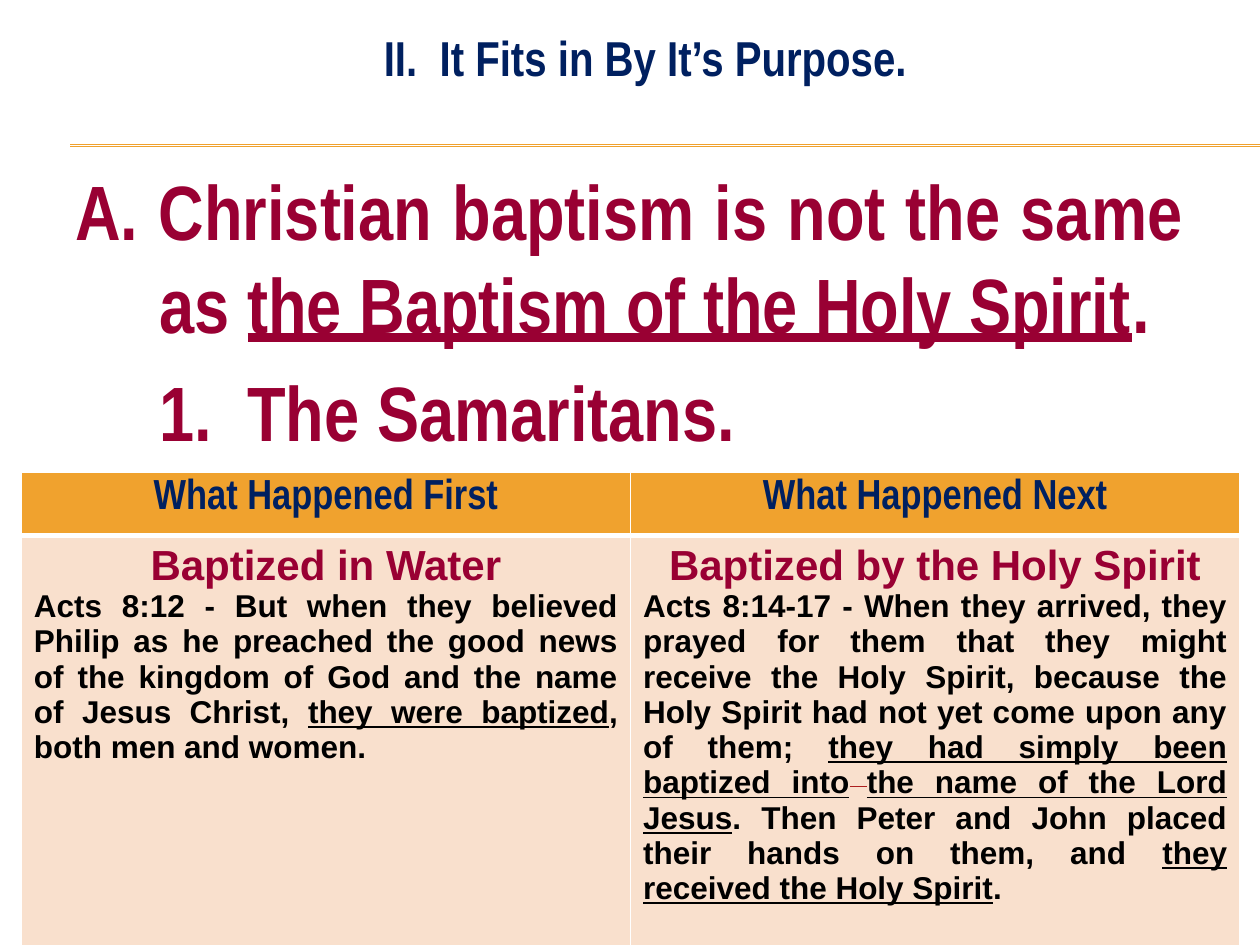
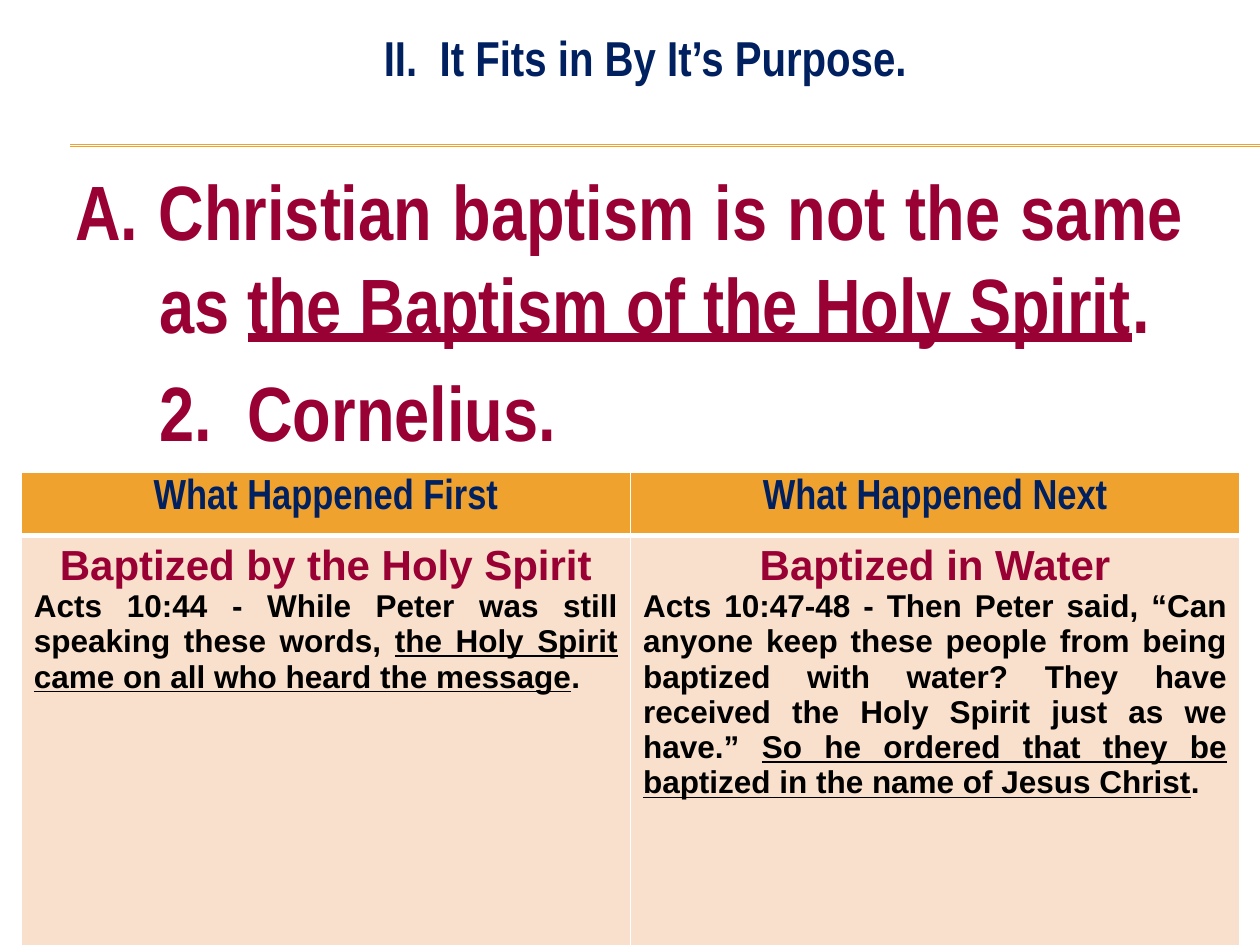
from lxml.etree import SubElement as Sub
from pptx import Presentation as Deck
from pptx.dml.color import RGBColor as Rgb
from pptx.enum.shapes import MSO_CONNECTOR as Link
from pptx.enum.text import MSO_ANCHOR as Anchor, MSO_AUTO_SIZE as Auto, PP_ALIGN as Align
from pptx.oxml.ns import qn
from pptx.util import Cm, Pt

HUES = {"gold": "F0A22E", "peach": "F9E0CD", "navy": "002060", "wine": "990033",
        "black": "000000", "white": "FFFFFF", "red": "AD1F1F"}
LOOKS = {
    "title": {"name": "Arial Narrow", "size": Pt(28), "bold": True, "hue": "navy"},
    "point": {"name": "Arial Narrow", "size": Pt(44), "bold": True, "hue": "wine"},
    "head": {"name": "Arial Narrow", "size": Pt(24), "bold": True, "hue": "navy"},
    "event": {"name": "Arial", "size": Pt(24), "bold": True, "hue": "wine"},
    "verse": {"name": "Arial", "size": Pt(18), "bold": True, "hue": "black"},
}
LINE = {"underline": True}
HEADS = ["What Happened First", "What Happened Next"]
WATER, SPIRIT = "Baptized in Water", "Baptized by the Holy Spirit"
PAGES = [
    ("1.  The Samaritans.", [
        (WATER, [
            ("Acts 8:12 - But when they believed Philip as he preached the good news "
             "of the kingdom of God and the name of Jesus Christ, ", {}),
            ("they were baptized", LINE), (", both men and women.", {})]),
        (SPIRIT, [
            ("Acts 8:14-17 - When they arrived, they prayed for them that they might "
             "receive the Holy Spirit, because the Holy Spirit had not yet come upon "
             "any of them; ", {}),
            ("they had simply been baptized into", LINE),
            (" ", {"underline": True, "hue": "red", "raise": "30000"}),
            ("the name of the Lord Jesus", LINE),
            (". Then Peter and John placed their hands on them, and ", {}),
            ("they received the Holy Spirit", LINE), (".", {})])]),
    ("2.  Cornelius.", [
        (SPIRIT, [
            ("Acts 10:44 - While Peter was still speaking these words, ", {}),
            ("the Holy Spirit came on all who heard the message", LINE), (".", {})]),
        (WATER, [
            ("Acts 10:47-48 - Then Peter said, “Can anyone keep these people from "
             "being baptized with water? They have received the Holy Spirit just as "
             "we have.” ", {}),
            ("So he ordered that they be baptized in the name of Jesus Christ", LINE),
            (".", {})])]),
]


class Maker:
    def __init__(self):
        self.deck = Deck()
        self.deck.slide_width, self.deck.slide_height = Cm(25.4), Cm(19.05)
        self.slide = None

    def hue(self, name):
        return Rgb.from_string(HUES[name])

    def page(self, title):
        self.slide = self.deck.slides.add_slide(self.deck.slide_layouts[5])
        box = self.slide.shapes.title
        place = {"left": 2.11, "top": 0.43, "width": 21.79, "height": 1.45}
        for key, val in place.items():
            setattr(box, key, Cm(val))
        frame = box.text_frame
        frame.auto_size, frame.vertical_anchor = Auto.NONE, Anchor.TOP
        self.text(frame.paragraphs[0], "title", [(title, {})], Align.CENTER)

    def text(self, para, look, parts, align):
        para.alignment = align
        for words, extra in parts:
            run = para.add_run()
            run.text = words
            for key, val in {**LOOKS[look], **extra}.items():
                if key == "hue":
                    run.font.color.rgb = self.hue(val)
                elif key == "raise":
                    run._r.get_or_add_rPr().set("baseline", val)
                else:
                    setattr(run.font, key, val)

    def rule(self, top):
        line = self.slide.shapes.add_connector(
            Link.STRAIGHT, Cm(1.42), Cm(top), Cm(25.4), Cm(top))
        line.line.color.rgb, line.line.width = self.hue("gold"), Pt(0.75)
        Sub(line._element.spPr, qn("a:effectLst"))

    def points(self, items):
        box = self.slide.shapes.add_textbox(Cm(1.27), Cm(3.18), Cm(22.86), Cm(15.04))
        frame = box.text_frame
        frame.word_wrap = True
        for num, (parts, hang) in enumerate(items):
            para = frame.add_paragraph() if num else frame.paragraphs[0]
            para.space_before = Pt(8.8)
            props = para._p.get_or_add_pPr()
            props.set("marL", str(Cm(1.7)))
            props.set("indent", str(-Cm(hang)))
            self.text(para, "point", parts, Align.JUSTIFY)

    def edge(self, cell, **sides):
        props = cell._tc.get_or_add_tcPr()
        for num, side in enumerate("LRTB"):
            line = Sub(props, qn("a:ln" + side), w=str(Pt(sides.get(side, 1))))
            fill = Sub(line, qn("a:solidFill"))
            Sub(fill, qn("a:srgbClr"), val=HUES["white"])
            props.insert(num, line)

    def table(self, heads, cells):
        grid = self.slide.shapes.add_table(
            2, 2, Cm(0.43), Cm(9.53), Cm(24.56), Cm(9.53)).table
        grid.horz_banding = False
        for row, tall in zip(grid.rows, (1.22, 8.31)):
            row.height = Cm(tall)
        for col, (head, (event, verse)) in enumerate(zip(heads, cells)):
            top, low = grid.cell(0, col), grid.cell(1, col)
            for cell, tint, sides in ((top, "gold", {"B": 3}), (low, "peach", {"T": 3})):
                cell.fill.solid()
                cell.fill.fore_color.rgb = self.hue(tint)
                self.edge(cell, **sides)
            self.text(top.text_frame.paragraphs[0], "head", [(head, {})], Align.CENTER)
            frame = low.text_frame
            self.text(frame.paragraphs[0], "event", [(event, {})], Align.CENTER)
            self.text(frame.add_paragraph(), "verse", verse, Align.JUSTIFY)


def main():
    make = Maker()
    claim = [("A. Christian baptism is not the same as ", {}),
             ("the Baptism of the Holy Spirit", LINE), (".", {})]
    for case, cells in PAGES:
        make.page("II.  It Fits in By It’s Purpose.")
        for top in (2.92, 2.95):
            make.rule(top)
        make.points([(claim, 1.7), ([(case, {})], 0)])
        make.table(HEADS, cells)
    make.deck.save("out.pptx")


if __name__ == "__main__":
    main()
